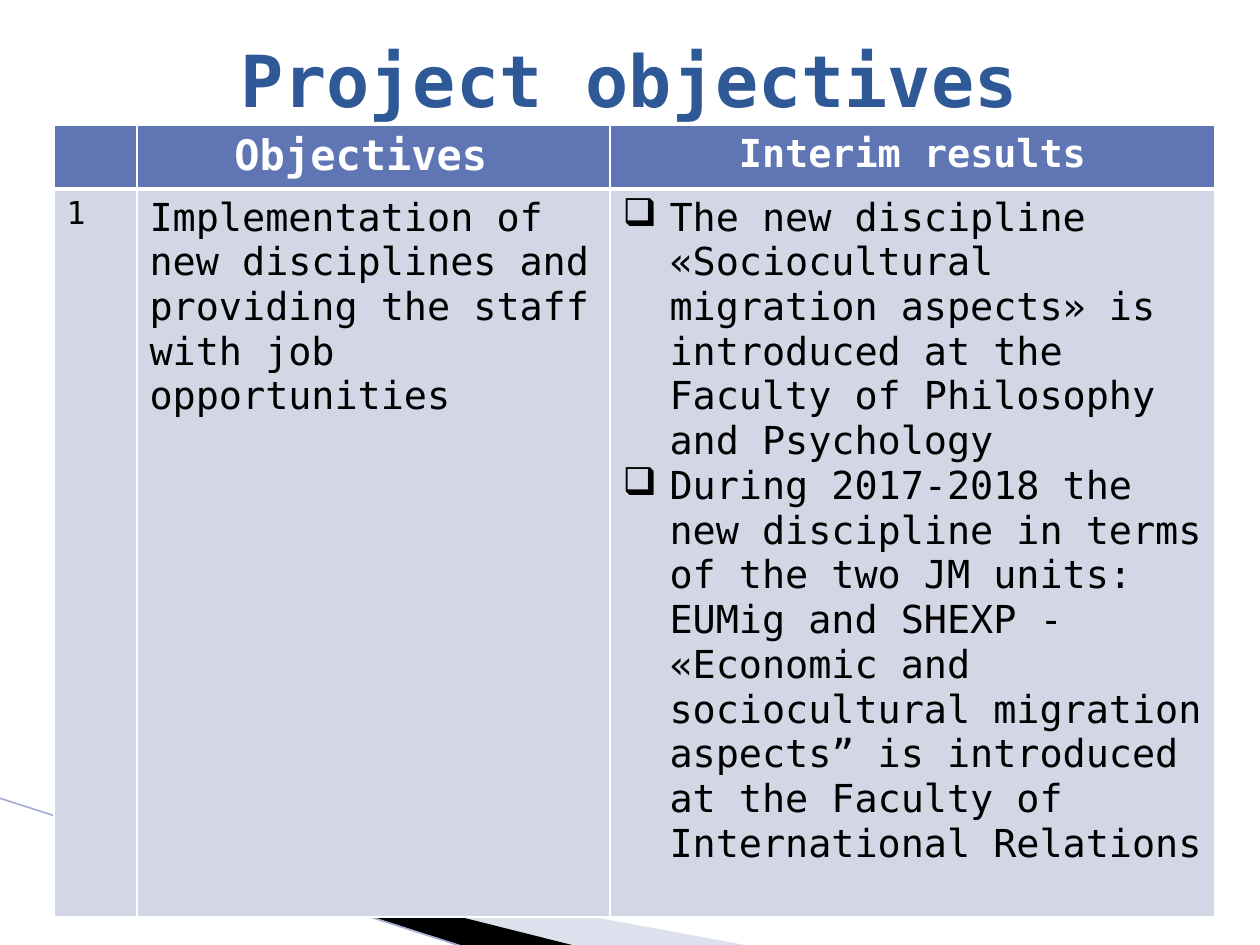
import pptx
import pptx.util
import pptx.dml.color
import pptx.enum.shapes
import pptx.enum.text
import pptx.oxml
import pptx.oxml.ns

RGB = pptx.dml.color.RGBColor
WHITE = RGB(0xFF, 0xFF, 0xFF)
BLACK = RGB(0, 0, 0)
TITLE_BLUE = RGB(0x2F, 0x58, 0x97)
HEADER_BLUE = RGB(0x60, 0x76, 0xB4)
CELL_GREY = RGB(0xD2, 0xD6, 0xE5)
BAND_BLUE = RGB(0xAC, 0xB4, 0xD5)
LINE_BLUE = RGB(0xA4, 0xAE, 0xD0)
FONT = "DejaVu Sans Mono"
ALIGN = pptx.enum.text.PP_ALIGN
EMU_PER_PX = 914400 / 126

HEADERS = ["", "Objectives ", "Interim results"]
OBJECTIVE = ("Implementation of new disciplines and providing the staff "
             "with job opportunities")
RESULTS = [
    "The new discipline «Sociocultural migration aspects» is introduced "
    "at the Faculty of Philosophy and Psychology",
    "During 2017-2018 the new discipline in terms of the two JM units: "
    "EUMig and SHEXP - «Economic and sociocultural migration aspects” is "
    "introduced at the Faculty of International Relations",
]


def px(n):
    return pptx.util.Emu(round(n * EMU_PER_PX))


def xml(tag, content="", attrs=""):
    ns = pptx.oxml.ns.nsdecls("a")
    return pptx.oxml.parse_xml(f"<a:{tag} {ns} {attrs}>{content}</a:{tag}>")


def add_run(p, text, size, color, bold=False):
    r = p.add_run()
    r.text = text
    r.font.name = FONT
    r.font.size = pptx.util.Pt(size)
    r.font.bold = bold
    r.font.color.rgb = color


def add_band(s, points, color, alpha=None):
    fb = s.shapes.build_freeform(*points[0], scale=EMU_PER_PX)
    fb.add_line_segments(points[1:])
    sp = fb.convert_to_shape()
    sp.shadow.inherit = False
    sp.line.fill.background()
    sp.fill.solid()
    sp.fill.fore_color.rgb = color
    if alpha:
        clr = sp.element.spPr.find(".//" + pptx.oxml.ns.qn("a:srgbClr"))
        clr.append(xml("alpha", attrs=f'val="{alpha * 1000}"'))


def add_line(s, start, end, color, width):
    line = s.shapes.add_connector(pptx.enum.shapes.MSO_CONNECTOR.STRAIGHT,
                                  *map(px, start + end))
    line.line.color.rgb = color
    line.line.width = pptx.util.Pt(width)
    line.element.spPr.append(xml("effectLst"))


def add_title(s, text):
    title = s.shapes.title
    title.left, title.top, title.width, title.height = map(px, (84, 0, 1134, 158))
    tf = title.text_frame
    tf.word_wrap = True
    tf.vertical_anchor = pptx.enum.text.MSO_ANCHOR.MIDDLE
    p = tf.paragraphs[0]
    p.alignment = ALIGN.CENTER
    add_run(p, text, 41, TITLE_BLUE, True)
    # Bring the title in front of the bands
    title.element.getparent().append(title.element)


def style_cell(cell, fill, bottom):
    cell.fill.solid()
    cell.fill.fore_color.rgb = fill
    tcPr = cell._tc.get_or_add_tcPr()
    widths = {"lnL": 1, "lnR": 1, "lnT": 1, "lnB": bottom}
    for i, (tag, width) in enumerate(widths.items()):
        ln = xml(tag, f'<a:solidFill><a:srgbClr val="{WHITE}"/></a:solidFill>',
                 f'w="{pptx.util.Pt(width)}"')
        tcPr.insert(i, ln)


def add_bullet(p, char, indent):
    pPr = p._p.get_or_add_pPr()
    pPr.set("marL", str(indent))
    pPr.set("indent", str(-indent))
    pPr.append(xml("buChar", attrs=f'char="{char}"'))


def add_objectives_table(s):
    columns, rows = (83, 473, 605), (64, 728)
    frame = s.shapes.add_table(2, 3, px(54), px(125),
                               px(sum(columns)), px(sum(rows)))
    table = frame.table
    for column, width in zip(table.columns, columns):
        column.width = px(width)
    for row, height in zip(table.rows, rows):
        row.height = px(height)

    # Header row
    for c, (text, size) in enumerate(zip(HEADERS, (18, 24, 22))):
        cell = table.cell(0, c)
        style_cell(cell, HEADER_BLUE, 3)
        if text:
            p = cell.text_frame.paragraphs[0]
            p.alignment = ALIGN.CENTER
            add_run(p, text, size, WHITE, True)

    # Body row
    body = [(["1"], 18), ([OBJECTIVE], 22), (RESULTS, 22)]
    for c, (texts, size) in enumerate(body):
        cell = table.cell(1, c)
        style_cell(cell, CELL_GREY, 1)
        tf = cell.text_frame
        for i, text in enumerate(texts):
            p = tf.add_paragraph() if i else tf.paragraphs[0]
            if texts is RESULTS:
                add_bullet(p, "❑", px(47))
            add_run(p, text, size, BLACK)


def main():
    prs = pptx.Presentation()
    prs.slide_width, prs.slide_height = px(1260), px(945)
    s = prs.slides.add_slide(prs.slide_layouts[5])

    # Bands and line at the bottom
    add_band(s, [(69, 820), (750, 946), (575, 946), (69, 819)], BAND_BLUE, 40)
    add_band(s, [(67, 818), (576, 946), (469, 948), (68, 819)], BLACK)
    add_line(s, (-1, 798), (467, 948), LINE_BLUE, 0.95)

    add_title(s, "Project objectives ")
    add_objectives_table(s)
    prs.save("out.pptx")


if __name__ == "__main__":
    main()
